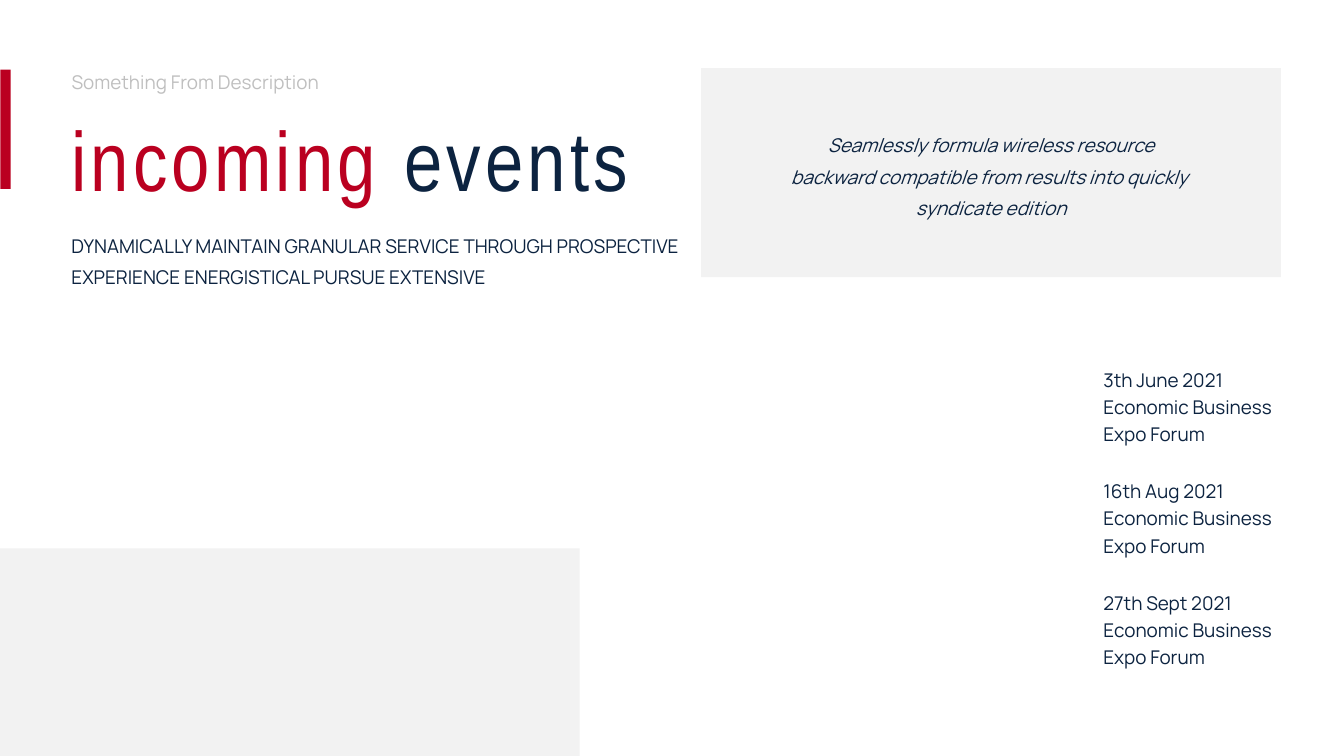
from dataclasses import dataclass

from pptx import Presentation
from pptx.dml.color import RGBColor
from pptx.enum.shapes import MSO_SHAPE as Shape
from pptx.enum.text import MSO_AUTO_SIZE as AutoSize, PP_ALIGN as Align
from pptx.util import Pt


@dataclass(frozen=True)
class Theme:
    red: str = "BA0020"
    navy: str = "0C2340"
    grey: str = "BFBFBF"
    panel: str = "F2F2F2"
    title_font: str = "Arial Narrow"
    body_font: str = "Manrope"
    title_size: int = 120
    body_size: int = 27
    title_tracking: int = 6
    loose: float = 1.4
    snug: float = 1.2
    tight: float = 0.8


THEME = Theme()
PANEL_W, PANEL_H = 828, 298.8
EVENTS = [
    ("3th June 2021", "Economic Business", "Expo Forum"),
    ("16th Aug 2021", "Economic Business", "Expo Forum"),
    ("27th Sept 2021", "Economic Business", "Expo Forum"),
]


def add_rect(s, x, y, w, h, color):
    sp = s.shapes.add_shape(Shape.RECTANGLE, Pt(x), Pt(y), Pt(w), Pt(h))
    sp.shadow.inherit = False
    sp.fill.solid()
    sp.fill.fore_color.rgb = RGBColor.from_string(color)
    sp.line.fill.background()


def add_box(s, x, y, w, h):
    """Add a wrapping text box and return its text frame."""
    tf = s.shapes.add_textbox(Pt(x), Pt(y), Pt(w), Pt(h)).text_frame
    tf.word_wrap = True
    tf.auto_size = AutoSize.SHAPE_TO_FIT_TEXT
    return tf


def add_run(p, text, font=THEME.body_font, size=THEME.body_size,
            color=THEME.navy, italic=None, tracking=None):
    r = p.add_run()
    r.text = text
    r.font.name, r.font.size, r.font.italic = font, Pt(size), italic
    r.font.color.rgb = RGBColor.from_string(color)
    if tracking:
        r.font._element.set("spc", str(tracking * 100))


def write(p, text, spacing=THEME.loose, align=None, before=None, **fmt):
    """Fill a paragraph; each newline in the text becomes a line break."""
    p.line_spacing = spacing
    p.alignment = align
    if before:
        p.space_before = Pt(before)
    for i, line in enumerate(text.split("\n")):
        if i:
            p.add_line_break()
        add_run(p, line, **fmt)


def add_heading(s, x, y, w):
    # Kicker, two-colour title and subtitle
    kicker = add_box(s, x, y, 642.24, 51.12)
    write(kicker.paragraphs[0], "Something From Description", color=THEME.grey)

    title = add_box(s, x, y + 94.32, w, 131.04).paragraphs[0]
    title.line_spacing = THEME.tight
    for text, color in (("incoming ", THEME.red), ("events", THEME.navy)):
        add_run(title, text, font=THEME.title_font, size=THEME.title_size,
                color=color, tracking=THEME.title_tracking)

    subtitle = add_box(s, x, y + 234, w - 24.5, 95.04)
    write(subtitle.paragraphs[0],
          "DYNAMICALLY MAINTAIN GRANULAR SERVICE THROUGH PROSPECTIVE "
          "EXPERIENCE ENERGISTICAL PURSUE EXTENSIVE")


def add_quote(s, x, y, w, h):
    # Grey panel with a centred quotation
    add_rect(s, x, y, w, h, THEME.panel)
    text_w, text_h = 774, 141.12
    tf = add_box(s, x + (w - text_w) / 2, y + (h - text_h) / 2 - 1.8,
                 text_w, text_h)
    write(tf.paragraphs[0],
          "Seamlessly formula wireless resource\n"
          "backward compatible from results into quickly \n"
          "syndicate edition", align=Align.CENTER, italic=True)


def add_events(s, x, y, w, h):
    # Dated events, separated by paragraph spacing
    tf = add_box(s, x, y, w, h)
    for i, (date, *details) in enumerate(EVENTS):
        p = tf.add_paragraph() if i else tf.paragraphs[0]
        write(p, date, before=36 if i else None)
        for line in details:
            write(tf.add_paragraph(), line, spacing=THEME.snug)


def main():
    prs = Presentation()
    prs.slide_width, prs.slide_height = Pt(1919.52), Pt(1080)
    s = prs.slides.add_slide(prs.slide_layouts[6])

    # Lower-left panel and red edge marker
    add_rect(s, 0, 783.36, PANEL_W, PANEL_H, THEME.panel)
    add_rect(s, 0.72, 99.36, 14.4, 170.64, THEME.red)

    add_heading(s, 95.04, 84.24, 907.2)
    add_quote(s, 1001.52, 97.2, PANEL_W, PANEL_H)
    add_events(s, 1568.88, 509.76, 321.12, 494.64)

    prs.save("out.pptx")


if __name__ == "__main__":
    main()
